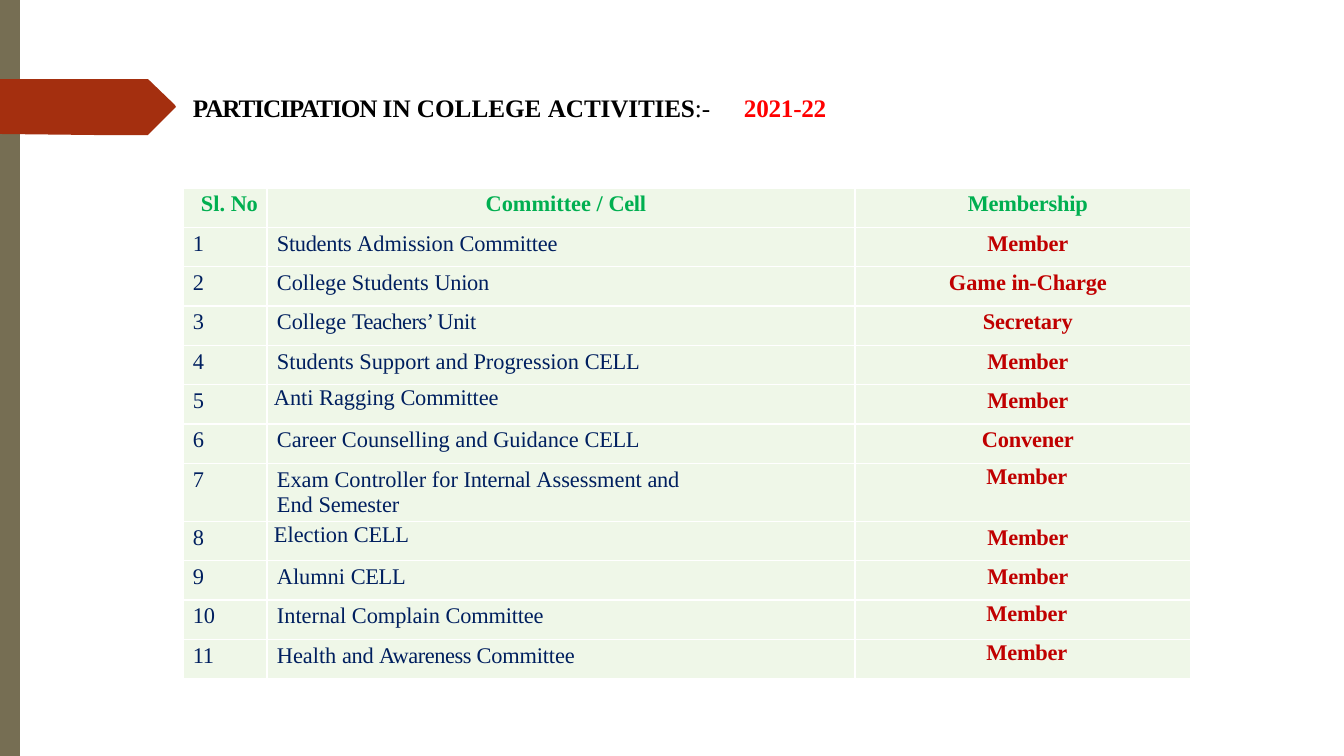
from dataclasses import dataclass

from lxml import etree
from pptx import Presentation
from pptx.dml.color import RGBColor
from pptx.enum import shapes, text
from pptx.oxml import ns
from pptx import util as u

EMU_PER_PX = 914400 / 100.8


@dataclass(frozen=True)
class Theme:
    font: str = "Times New Roman"
    title_size: int = 18
    cell_size: int = 16
    bar: str = "766E53"
    arrow: str = "A42F0F"
    title: str = "000000"
    year: str = "FF0000"
    cell_fill: str = "EFF7E8"
    border: str = "FFFFFF"
    header: str = "00AF50"
    body: str = "001F5F"
    role: str = "C00000"


THEME = Theme()

ARROW_POINTS = [(0, 79), (0, 134), (95, 135), (148, 135), (149, 134),
                (175, 108), (176, 107), (175, 105), (149, 80), (148, 79)]

# Each run is (words, letter spacing in hundredths of a point)
HEADINGS = [
    [("Sl. ", 0), ("No", -20)],
    [("Committee / ", 0), ("Cell", -20)],
    [("Membership", -10)],
]
MEMBER = [("Member", -10)]
COMMITTEES = [
    ([("Students ", -20), ("Admission ", 0), ("Committee", -10)], MEMBER),
    ([("College Students ", 0), ("Union", -20)],
     [("Game ", 0), ("in-", -30), ("Charge", -10)]),
    ([("College ", 0), ("Teachers’ ", -40), ("Unit", -20)], [("Secretary", -10)]),
    ([("Students Support and Progression ", 0), ("CELL", -20)], MEMBER),
    ([("Anti Ragging ", 0), ("Committee", -10)], MEMBER),
    ([("Career Counselling and Guidance ", 0), ("CELL", -20)], [("Convener", -10)]),
    ([("Exam Controller for ", 0), ("Internal ", -20), ("Assessment ", 0),
      ("and ", -20), ("End ", 0), ("Semester", -10)], MEMBER),
    ([("Election ", 0), ("CELL", -20)], MEMBER),
    ([("Alumni ", 0), ("CELL", -20)], MEMBER),
    ([("Internal Complain ", 0), ("Committee", -10)], MEMBER),
    ([("Health ", 0), ("and ", -20), ("Awareness ", -30), ("Committee", -10)], MEMBER),
]
COLUMN_WIDTHS = [84, 588, 336]
TALL_ROW, TALL_HEIGHT, OTHER_ROWS_HEIGHT = 7, 58, 433
# Cells with a fixed line height and no top margin: (row, column) to left margin
TIGHT_CELLS = {(5, 1): 7, (7, 2): 8, (8, 1): 7, (10, 2): 8, (11, 2): 8}


def px(length):
    return u.Emu(round(length * EMU_PER_PX))


def set_all(target, values):
    for name, value in values.items():
        setattr(target, name, value)


def paint(shape, color):
    shape.shadow.inherit = False
    shape.fill.solid()
    shape.fill.fore_color.rgb = RGBColor.from_string(color)
    shape.line.fill.background()


def add_runs(paragraph, runs, size, color, bold):
    for words, spacing in runs:
        run = paragraph.add_run()
        run.text = words
        set_all(run.font, {"name": THEME.font, "size": u.Pt(size), "bold": bold})
        run.font.color.rgb = RGBColor.from_string(color)
        if spacing:
            run.font._element.set("spc", str(spacing))


def add_label(slide, left, top, width, height, color, runs):
    frame = slide.shapes.add_textbox(*map(px, (left, top, width, height))).text_frame
    set_all(frame, {"word_wrap": True, "margin_left": px(1), "margin_top": px(1),
                    "margin_right": 0, "margin_bottom": 0})
    add_runs(frame.paragraphs[0], runs, THEME.title_size, color, True)
    return frame.paragraphs[0]


def add_borders(cell):
    properties = cell._tc.get_or_add_tcPr()
    for index, side in enumerate(("lnL", "lnR", "lnT", "lnB")):
        line = etree.Element(ns.qn(f"a:{side}"), w=str(u.Pt(1)))
        fill = etree.SubElement(line, ns.qn("a:solidFill"))
        etree.SubElement(fill, ns.qn("a:srgbClr"), val=THEME.border)
        properties.insert(index, line)


def fill_cell(cell, row, column, runs):
    tight = (row, column) in TIGHT_CELLS
    first = (row, column) == (0, 0)
    wraps = (row, column) == (TALL_ROW, 1)
    left = TIGHT_CELLS.get((row, column), 18 if first else 10)
    set_all(cell, {"margin_left": px(left), "margin_top": px(0 if tight else 4),
                   "margin_right": px(165 if wraps else 0), "margin_bottom": 0})
    cell.fill.solid()
    cell.fill.fore_color.rgb = RGBColor.from_string(THEME.cell_fill)
    add_borders(cell)

    paragraph = cell.text_frame.paragraphs[0]
    if column == 2 or (row == 0 and column == 1):
        paragraph.alignment = text.PP_ALIGN.CENTER
    if tight:
        paragraph.line_spacing = u.Pt(18.6)
    color = THEME.header if row == 0 else THEME.role if column == 2 else THEME.body
    add_runs(paragraph, runs, THEME.cell_size, color, row == 0 or column == 2)


def add_committee_table(slide):
    rows = [HEADINGS]
    for number, (committee, role) in enumerate(COMMITTEES, 1):
        rows.append([[(str(number), -20)], committee, role])
    table = slide.shapes.add_table(
        len(rows), len(COLUMN_WIDTHS), px(183), px(188), px(sum(COLUMN_WIDTHS)),
        px(OTHER_ROWS_HEIGHT + TALL_HEIGHT)).table
    set_all(table, {"first_row": False, "horz_banding": False})
    for column, width in zip(table.columns, COLUMN_WIDTHS):
        column.width = px(width)
    for index, cells in enumerate(rows):
        table.rows[index].height = px(
            TALL_HEIGHT if index == TALL_ROW else OTHER_ROWS_HEIGHT / (len(rows) - 1))
        for column, runs in enumerate(cells):
            fill_cell(table.cell(index, column), index, column, runs)


def add_side_decoration(slide):
    bar = slide.shapes.add_shape(shapes.MSO_SHAPE.RECTANGLE, 0, 0, px(20), px(756))
    paint(bar, THEME.bar)
    builder = slide.shapes.build_freeform(*ARROW_POINTS[0], scale=EMU_PER_PX)
    builder.add_line_segments(ARROW_POINTS[1:], close=True)
    paint(builder.convert_to_shape(), THEME.arrow)


def main():
    presentation = Presentation()
    set_all(presentation, {"slide_width": px(1344), "slide_height": px(756)})
    slide = presentation.slides.add_slide(presentation.slide_layouts[6])

    # Side bar and arrow
    add_side_decoration(slide)

    # Title and year
    title = add_label(slide, 192, 91, 529, 33, THEME.title, [
        ("PARTICIPATION ", -80), ("IN COLLEGE ", 0), ("ACTIVITIES", -10)])
    add_runs(title, [(":-", -10)], THEME.title_size, THEME.title, False)
    add_label(slide, 743, 91, 86, 33, THEME.year, [("2021-22", -20)])

    # Committees and roles
    add_committee_table(slide)
    presentation.save("out.pptx")


if __name__ == "__main__":
    main()
